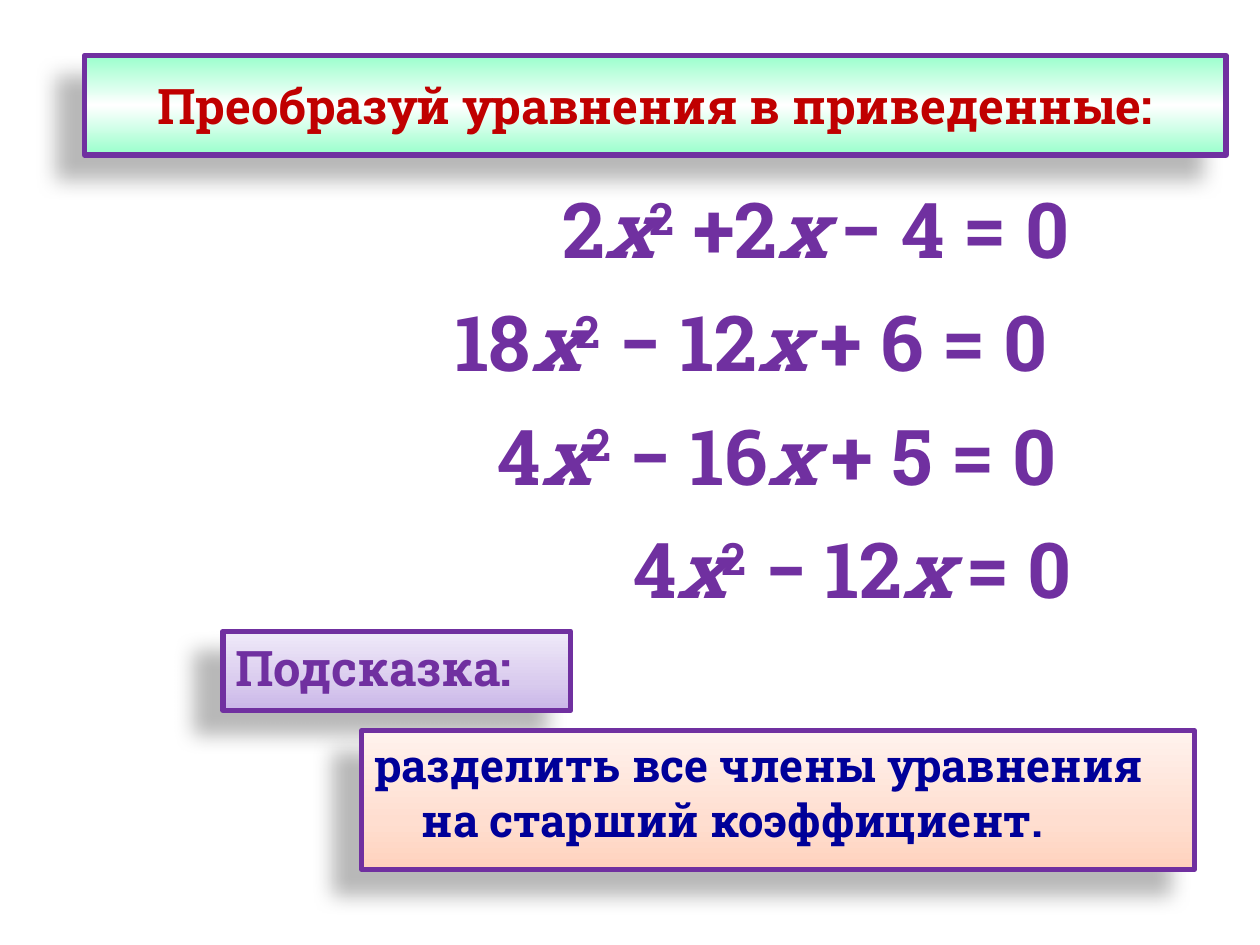
from dataclasses import dataclass

from lxml import etree
from pptx import Presentation
from pptx import util as u
from pptx.dml.color import RGBColor
from pptx.enum import shapes, text
from pptx.oxml import ns

PX = 9144  # 100 px to the inch


@dataclass(frozen=True)
class Theme:
    font: str = "Roboto Slab"
    purple: str = "7030A0"
    red: str = "C00000"
    navy: str = "000099"
    shadow: str = "000000"
    mint: tuple = ((0, "99FFCC"), (50, "FFFFFF"), (100, "99FFCC"))
    lilac: tuple = ((0, "C9B5E8"), (35, "D9CBEE"), (100, "F0EAF9"))
    peach: tuple = ((0, "FFD2BD"), (35, "FFDED0"), (100, "FFF2ED"))
    title_size: int = 28
    hint_size: int = 26
    equation_size: int = 44


THEME = Theme()


@dataclass(frozen=True)
class Panel:
    left: int
    top: int
    width: int
    height: int
    wording: str
    stops: tuple
    angle: int
    color: str
    size: int


@dataclass(frozen=True)
class Equation:
    left: int
    lead: str
    middle: str
    end: str


TITLE = Panel(67, 44, 906, 79, "Преобразуй уравнения в приведенные:",
              THEME.mint, 270, THEME.red, THEME.title_size)
HINTS = [
    Panel(177, 501, 276, 63, "Подсказка:",
          THEME.lilac, 90, THEME.purple, THEME.title_size),
    Panel(287, 580, 661, 110, "разделить все члены уравнения на старший коэффициент.",
          THEME.peach, 90, THEME.navy, THEME.hint_size),
]
EQUATIONS = [
    Equation(396, "2", " +2", " − 4 = 0"),
    Equation(294, "18", " − 12", " + 6 = 0"),
    Equation(335, "4", " − 16", " + 5 = 0"),
    Equation(454, "4", " − 12", " = 0"),
]
EQUATION_TOP, EQUATION_STEP, EQUATION_HEIGHT, EQUATION_RIGHT = 139, 90, 84, 899


def add_color(parent, color: str, opacity: int = 100) -> None:
    node = etree.SubElement(parent, ns.qn("a:srgbClr"), val=color)
    if opacity < 100:
        etree.SubElement(node, ns.qn("a:alpha"), val=str(opacity * 1000))


def format_span(span, size: int, color: str) -> None:
    span.font.name = THEME.font
    span.font.size = u.Pt(size)
    span.font.bold = True
    span.font.color.rgb = RGBColor.from_string(color)


def fill_gradient(box, stops: tuple, angle: int) -> None:
    """Fill with any number of stops; the angle runs counter-clockwise."""
    box.fill.gradient()
    box.fill.gradient_angle = angle
    stop_list = box._element.spPr.find(".//" + ns.qn("a:gsLst"))
    for old in list(stop_list):
        stop_list.remove(old)
    for percent, color in stops:
        add_color(etree.SubElement(stop_list, ns.qn("a:gs"), pos=str(percent * 1000)), color)


def cast_shadow(box) -> None:
    box.shadow.inherit = False
    effects = box._element.spPr.find(ns.qn("a:effectLst"))
    shadow = etree.SubElement(
        effects, ns.qn("a:outerShdw"), blurRad=str(u.Pt(11.8)), dist=str(u.Pt(19.7)),
        dir=str(141 * 60000), algn="ctr", rotWithShape="0")
    add_color(shadow, THEME.shadow, 28)


def style_panel(box, panel: Panel) -> None:
    box.left, box.top = panel.left * PX, panel.top * PX
    box.width, box.height = panel.width * PX, panel.height * PX
    fill_gradient(box, panel.stops, panel.angle)
    box.line.color.rgb = RGBColor.from_string(THEME.purple)
    box.line.width = u.Pt(3)
    cast_shadow(box)
    box.text_frame.text = panel.wording
    format_span(box.text_frame.paragraphs[0].runs[0], panel.size, panel.color)


def draw_title(page, panel: Panel) -> None:
    box = page.shapes.title
    style_panel(box, panel)
    frame = box.text_frame
    frame.word_wrap = False
    frame.auto_size = text.MSO_AUTO_SIZE.NONE
    frame.vertical_anchor = text.MSO_ANCHOR.MIDDLE
    frame.paragraphs[0].alignment = text.PP_ALIGN.CENTER


def draw_hint(page, panel: Panel) -> None:
    box = page.shapes.add_shape(shapes.MSO_SHAPE.RECTANGLE, 0, 0, PX, PX)
    style_panel(box, panel)
    box.text_frame.word_wrap = True
    box.text_frame.vertical_anchor = text.MSO_ANCHOR.TOP
    para = box.text_frame.paragraphs[0]
    para.alignment = text.PP_ALIGN.LEFT
    properties = para._p.get_or_add_pPr()
    properties.set("marL", str(38 * PX))
    properties.set("indent", str(-38 * PX))


def draw_equation(page, equation: Equation, top: int) -> None:
    box = page.shapes.add_textbox(
        equation.left * PX, top * PX,
        (EQUATION_RIGHT - equation.left) * PX, EQUATION_HEIGHT * PX)
    frame = box.text_frame
    frame.word_wrap = False
    frame.auto_size = text.MSO_AUTO_SIZE.SHAPE_TO_FIT_TEXT
    para = frame.paragraphs[0]
    para.alignment = text.PP_ALIGN.CENTER
    parts = (equation.lead, "х", "2", equation.middle, "х", equation.end)
    for index, part in enumerate(parts):
        span = para.add_run()
        span.text = part
        format_span(span, THEME.equation_size, THEME.purple)
        span.font.italic = part == "х"
        if index == 2:
            span.font._element.set("baseline", "30000")


def main() -> None:
    deck = Presentation()
    deck.slide_width, deck.slide_height = 1000 * PX, 750 * PX
    page = deck.slides.add_slide(deck.slide_layouts[5])
    draw_title(page, TITLE)
    for row, equation in enumerate(EQUATIONS):
        draw_equation(page, equation, EQUATION_TOP + row * EQUATION_STEP)
    for hint in HINTS:
        draw_hint(page, hint)
    deck.save("out.pptx")


if __name__ == "__main__":
    main()
